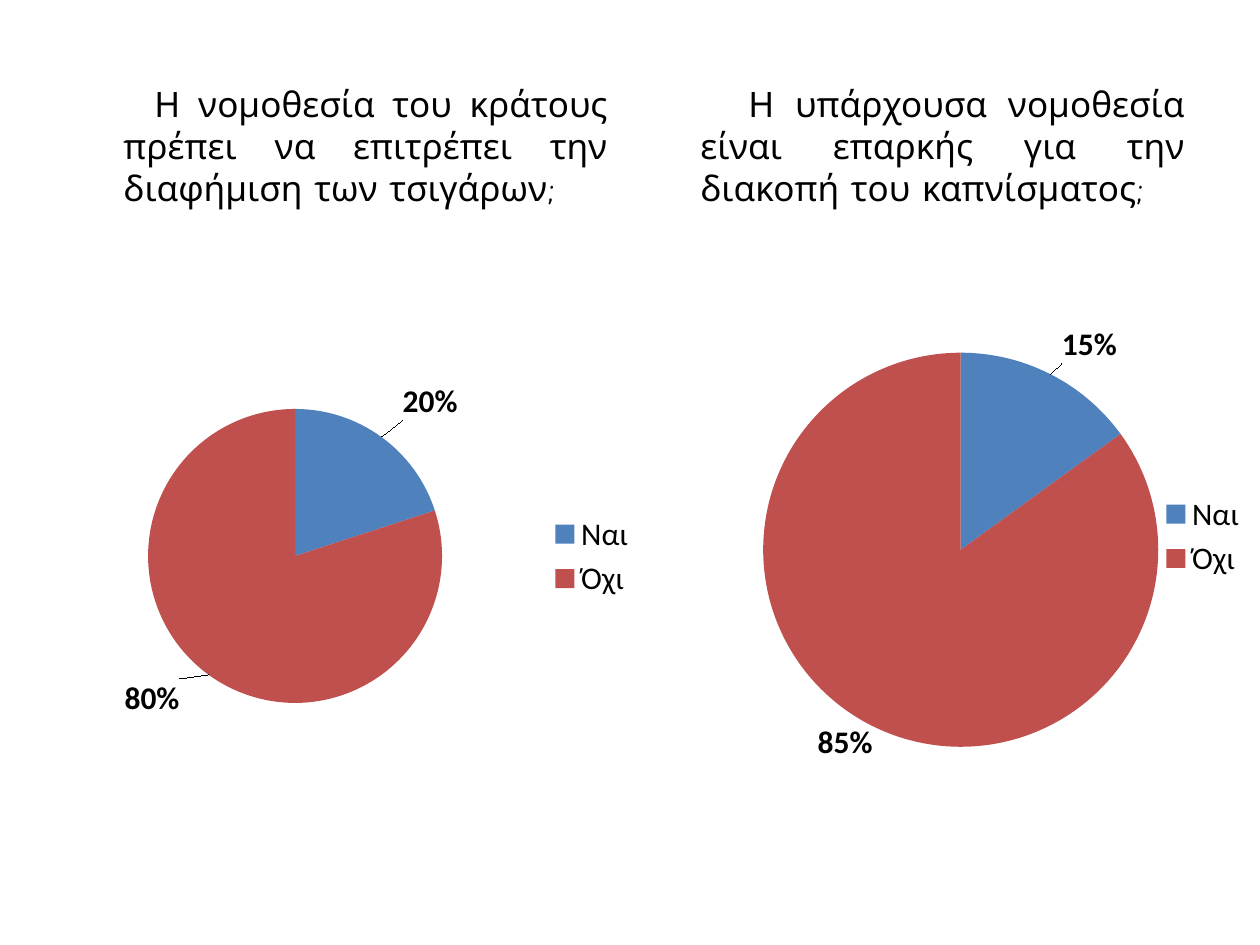
from lxml.etree import SubElement
from pptx import Presentation
from pptx.chart.data import CategoryChartData
from pptx.dml.color import RGBColor
from pptx.enum.chart import XL_CHART_TYPE, XL_LABEL_POSITION, XL_LEGEND_POSITION
from pptx.enum.text import PP_ALIGN
from pptx.oxml.ns import qn
from pptx.util import Emu, Pt

COLORS = {"text": "000000", "yes": "4F81BD", "no": "C0504D"}
SCALE = 914400 // 126
QUESTIONS = [
    {"text": "Η νομοθεσία του κράτους πρέπει να επιτρέπει την διαφήμιση των τσιγάρων;",
     "box": (63, 76, 557, 769), "first_line": 31},
    {"text": "Η υπάρχουσα νομοθεσία είναι επαρκής για την διακοπή του καπνίσματος;",
     "box": (640, 76, 557, 769), "first_line": 48},
]
PIES = [
    {"categories": ["Ναι", "Όχι"], "values": [0.2, 0.8], "box": (44, 363, 605, 387),
     "plot": (104, 46, 294, 294), "label_shifts": [(17, -11), (-25, -2)]},
    {"categories": ["Nαι", "Όχι"], "values": [0.15, 0.85], "box": (709, 304, 551, 466),
     "plot": (47, 49, 410, 395), "label_shifts": [(8, -4), (5, -9)]},
]


def px(length):
    return Emu(length * SCALE)


def color(name):
    return RGBColor.from_string(COLORS[name])


def add_text(slide, text, box, first_line, indent=48, size=20, font="Comic Neue"):
    frame = slide.shapes.add_textbox(*map(px, box)).text_frame
    frame.word_wrap = True
    paragraph = frame.paragraphs[0]
    paragraph.alignment = PP_ALIGN.JUSTIFY
    paragraph.space_before = Pt(5)
    properties = paragraph._p.get_or_add_pPr()
    properties.set("marL", str(px(indent)))
    properties.set("indent", str(px(first_line)))
    run = paragraph.add_run()
    run.text = text
    run.font.size = Pt(size)
    run.font.name = font
    run.font.color.rgb = color("text")


def add_layout(parent, index, values):
    for old in parent.findall(qn("c:layout")):
        parent.remove(old)
    layout = SubElement(parent, qn("c:layout"))
    parent.insert(index, layout)
    manual = SubElement(layout, qn("c:manualLayout"))
    for name, value in values.items():
        SubElement(manual, qn(f"c:{name}")).set("val", str(value))


def add_pie(slide, categories, values, box, plot, label_shifts):
    data = CategoryChartData(number_format="0%")
    data.categories = categories
    data.add_series("Series 1", values)
    chart = slide.shapes.add_chart(XL_CHART_TYPE.PIE, *map(px, box), data).chart
    chart.has_title = False
    chart.font.size = Pt(18)
    chart.font.name = "Calibri"
    chart.font.color.rgb = color("text")
    chart.has_legend = True
    chart.legend.position = XL_LEGEND_POSITION.RIGHT
    chart.legend.include_in_layout = False
    width, height = box[2:]

    series = chart.plots[0].series[0]
    labels = series.data_labels
    labels.show_value = True
    labels.number_format = "0%"
    labels.number_format_is_linked = False
    for index, name in enumerate(("yes", "no")):
        point = series.points[index]
        point.format.fill.solid()
        point.format.fill.fore_color.rgb = color(name)
        label = point.data_label
        label.position = XL_LABEL_POSITION.OUTSIDE_END
        label.font.bold = True
        label.font.size = Pt(18)
        label.font.color.rgb = color("text")

    label_elements = chart._chartSpace.xpath(".//c:dLbl")
    for element, (shift_x, shift_y) in zip(label_elements, label_shifts):
        add_layout(element, 1, {"x": round(shift_x / width, 3), "y": round(shift_y / height, 3)})
    left, top, plot_width, plot_height = plot
    add_layout(chart._chartSpace.xpath(".//c:plotArea")[0], 0, {
        "layoutTarget": "inner", "xMode": "edge", "yMode": "edge",
        "x": round(left / width, 3), "y": round(top / height, 3),
        "w": round(plot_width / width, 3), "h": round(plot_height / height, 3)})


def main():
    presentation = Presentation()
    presentation.slide_width, presentation.slide_height = px(1260), px(945)
    slide = presentation.slides.add_slide(presentation.slide_layouts[6])
    for question in QUESTIONS:
        add_text(slide, **question)
    for pie in PIES:
        add_pie(slide, **pie)
    presentation.save("out.pptx")


if __name__ == "__main__":
    main()
